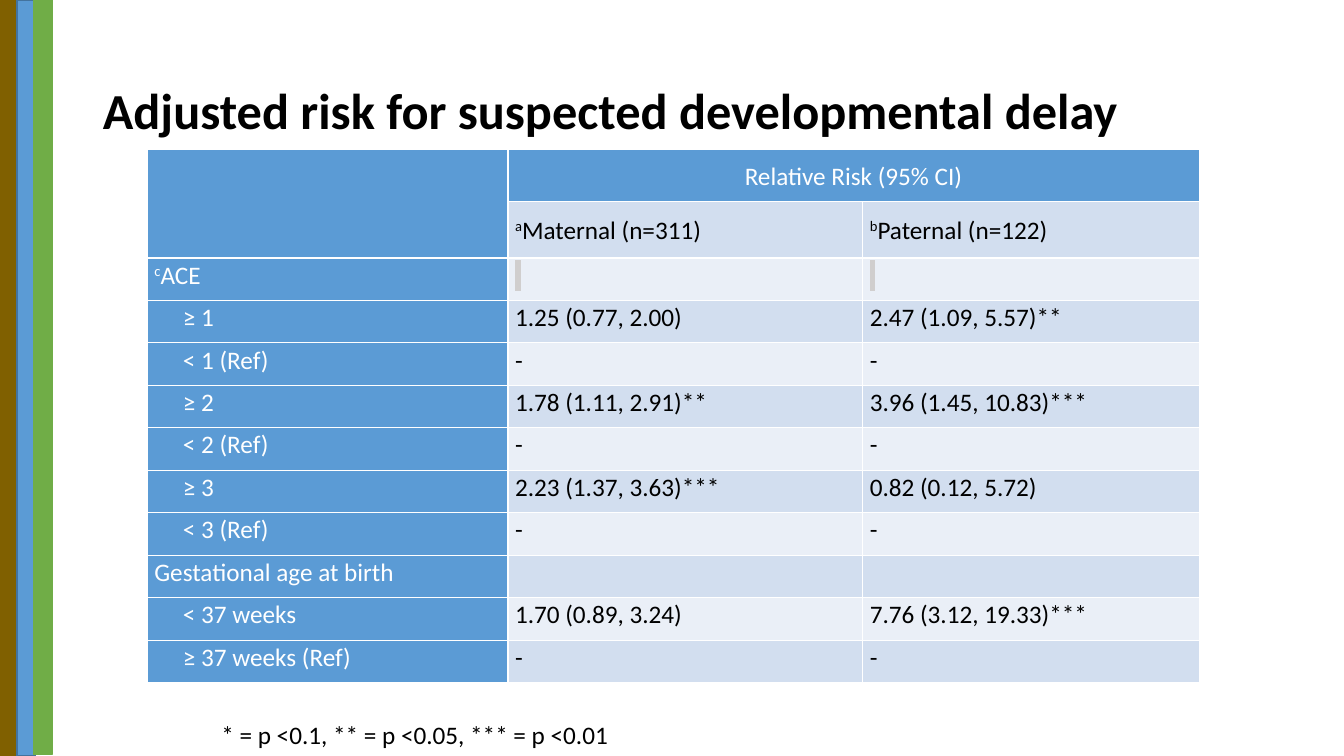
from lxml.etree import SubElement as Sub
from pptx import Presentation
from pptx.dml.color import RGBColor as RGB
from pptx.enum.shapes import MSO_SHAPE as SHAPE
from pptx.enum.text import MSO_ANCHOR as ANCHOR, MSO_AUTO_SIZE as FIT, PP_ALIGN as ALIGN
from pptx.oxml.ns import qn
from pptx.util import Cm, Pt

HUES = {
    "black": "000000", "white": "FFFFFF", "brown": "806000", "blue": "5B9BD5",
    "navy": "43739E", "green": "70AD47", "band": "D2DEEF", "pale": "EAEFF7",
    "mark": "D0CECE",
}
COLS = [9.09, 8.94, 8.48]
ROWS = [1.32, 1.42] + [1.07] * 10
GAP = " "
NONE = ("-", "-")
# Label, whether it is indented, and the maternal and paternal values
RISKS = [
    ("≥ 1", True, ("1.25 (0.77, 2.00)", "2.47 (1.09, 5.57)**")),
    ("< 1 (Ref)", True, NONE),
    ("≥ 2", True, ("1.78 (1.11, 2.91)**", "3.96 (1.45, 10.83)***")),
    ("< 2 (Ref)", True, NONE),
    ("≥ 3", True, ("2.23 (1.37, 3.63)***", "0.82 (0.12, 5.72)")),
    ("< 3 (Ref)", True, NONE),
    ("Gestational age at birth", False, ("", "")),
    ("< 37 weeks", True, ("1.70 (0.89, 3.24)", "7.76 (3.12, 19.33)***")),
    ("≥ 37 weeks (Ref)", True, NONE),
]
BARS = [(0, 0, "brown", "brown"), (0.43, 0, "blue", "navy"),
        (0.85, -0.03, "green", "green")]


def hue(name):
    return RGB.from_string(HUES[name])


class Deck:
    def __init__(self, wide, high, face):
        self.prs = Presentation()
        self.prs.slide_width, self.prs.slide_height = Cm(wide), Cm(high)
        self.face = face
        self.slide = self.prs.slides.add_slide(self.prs.slide_layouts[5])

    def style(self, para, size, color, bold=False, align=ALIGN.LEFT, space=1.0):
        font = para.font
        font.name, font.size, font.bold = self.face, Pt(size), bold
        font.color.rgb = hue(color)
        para.alignment, para.line_spacing = align, space

    def title(self, text, *box):
        head = self.slide.shapes.title
        head.left, head.top, head.width, head.height = map(Cm, box)
        head.text_frame.text = text
        head.text_frame.vertical_anchor = ANCHOR.MIDDLE
        self.style(head.text_frame.paragraphs[0], 36, "black", True, space=0.9)

    def note(self, text, *box):
        frame = self.slide.shapes.add_textbox(*map(Cm, box)).text_frame
        frame.word_wrap, frame.auto_size = True, FIT.SHAPE_TO_FIT_TEXT
        frame.text = text
        self.style(frame.paragraphs[0], 18, "black")

    def bars(self, items, wide, high):
        group = self.slide.shapes.add_group_shape()
        for left, top, fill, line in items:
            bar = group.shapes.add_shape(
                SHAPE.RECTANGLE, Cm(left), Cm(top), Cm(wide), Cm(high))
            bar.shadow.inherit = False
            bar.fill.solid()
            bar.fill.fore_color.rgb = hue(fill)
            bar.line.color.rgb, bar.line.width = hue(line), Pt(1)

    def table(self, left, top, cols, rows):
        grid = self.slide.shapes.add_table(
            len(rows), len(cols), Cm(left), Cm(top),
            Cm(sum(cols)), Cm(sum(rows))).table
        grid.first_row = grid.horz_banding = False
        for col, wide in zip(grid.columns, cols):
            col.width = Cm(wide)
        for row, high in zip(grid.rows, rows):
            row.height = Cm(high)
        for y in range(len(rows)):
            for x in range(len(cols)):
                shade = "blue" if x == 0 or y == 0 else ("pale", "band")[y % 2]
                self.paint(grid.cell(y, x), shade)
        return grid

    def paint(self, cell, shade):
        """Give a cell its white borders, fill, insets and text style."""
        props = cell._tc.get_or_add_tcPr()
        for side in ("lnL", "lnR", "lnT", "lnB"):
            edge = Sub(props, qn("a:" + side), w=str(Pt(1)))
            fill = Sub(edge, qn("a:solidFill"))
            Sub(fill, qn("a:srgbClr"), val=HUES["white"])
        cell.fill.solid()
        cell.fill.fore_color.rgb = hue(shade)
        cell.margin_left = cell.margin_right = Cm(0.18)
        cell.margin_top = cell.margin_bottom = 0
        ink = "white" if shade == "blue" else "black"
        self.style(cell.text_frame.paragraphs[0], 18, ink, space=1.07)

    def label(self, cell, text, sup=""):
        """Add text to a cell, after an optional superscript letter."""
        para = cell.text_frame.paragraphs[0]
        if sup:
            run = para.add_run()
            run.text = sup
            run._r.get_or_add_rPr().set("baseline", "30000")
        if text:
            para.add_run().text = text

    def mark(self, cell):
        """Put a highlighted space in a cell."""
        run = cell.text_frame.paragraphs[0].add_run()
        run.text = GAP
        glow = Sub(run._r.get_or_add_rPr(), qn("a:highlight"))
        Sub(glow, qn("a:srgbClr"), val=HUES["mark"])


def main():
    deck = Deck(33.87, 19.05, "Calibri")
    deck.title("Adjusted risk for suspected developmental delay",
               2.34, 1.02, 29.21, 3.68)

    grid = deck.table(3.71, 3.76, COLS, ROWS)
    grid.cell(0, 0).merge(grid.cell(1, 0))
    grid.cell(0, 1).merge(grid.cell(0, 2))
    top = grid.cell(0, 1)
    deck.label(top, "Relative Risk (95% CI)")
    top.text_frame.paragraphs[0].alignment = ALIGN.CENTER
    top.vertical_anchor = ANCHOR.MIDDLE
    heads = [("a", "Maternal (n=311)"), ("b", "Paternal (n=122)")]
    for x, (sup, text) in enumerate(heads, 1):
        deck.label(grid.cell(1, x), text, sup)
        grid.cell(1, x).vertical_anchor = ANCHOR.MIDDLE
        deck.mark(grid.cell(2, x))
    deck.label(grid.cell(2, 0), "ACE", "c")
    for y, (name, inner, risks) in enumerate(RISKS, 3):
        for x, text in enumerate((name, *risks)):
            deck.label(grid.cell(y, x), text)
        if inner:
            grid.cell(y, 0).margin_left = Cm(0.9)

    deck.bars(BARS, 0.46, 19.05)
    deck.note("* = p <0.1, ** = p <0.05, *** = p <0.01", 5.33, 18.01, 15.93, 1.02)
    deck.prs.save("out.pptx")


if __name__ == "__main__":
    main()
